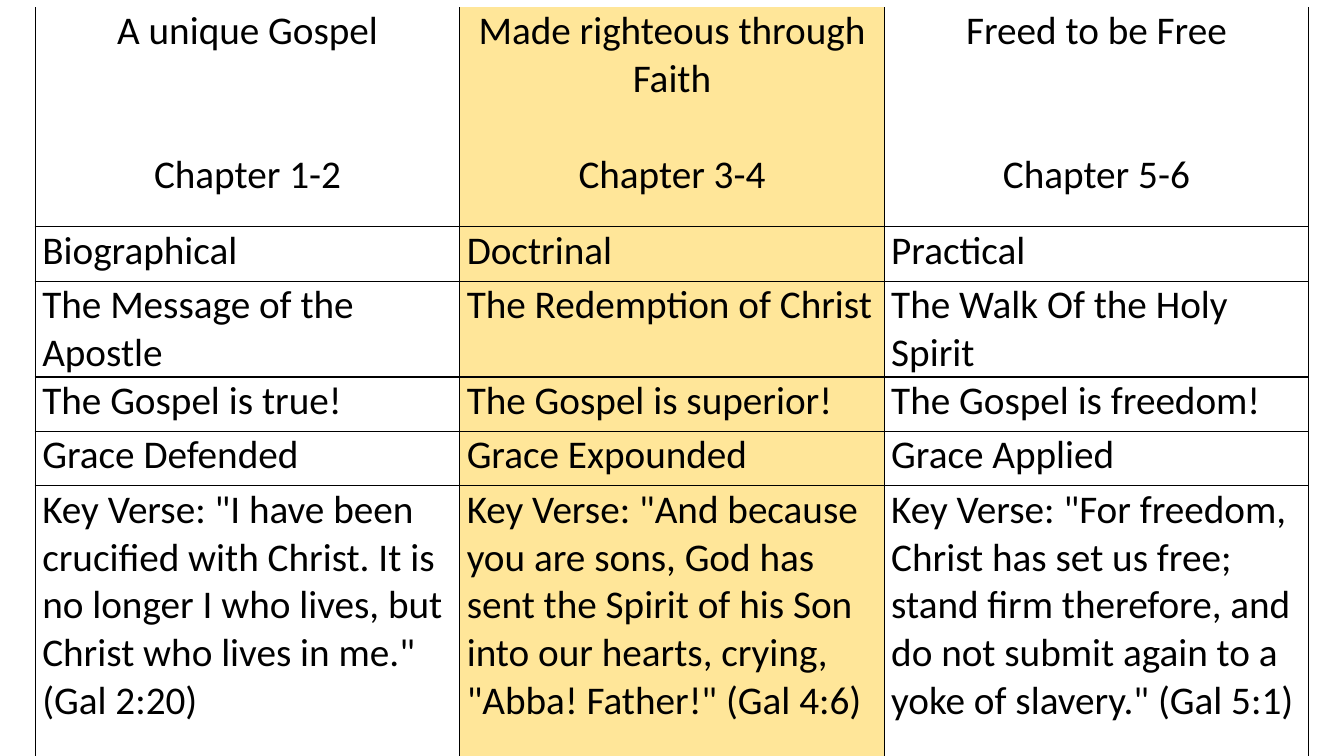
from lxml.etree import SubElement
from pptx import Presentation
from pptx.dml.color import RGBColor
from pptx.enum.text import PP_ALIGN
from pptx.oxml.ns import qn
from pptx.util import Inches, Pt

INK = "000000"
HIGHLIGHT = "FFE699"
LINE_PITCH = 34.2
ROW_HEIGHTS = [2.18, 0.54, 0.95, 0.54, 0.54, 2.7]
SECTIONS = [
    ("A unique Gospel", "Chapter 1-2", 2, [
        "Biographical",
        "The Message of the Apostle",
        "The Gospel is true!",
        "Grace Defended",
        'Key Verse: "I have been crucified with Christ. It is no longer I who lives, '
        'but Christ who lives in me." (Gal 2:20)',
    ]),
    ("Made righteous through Faith", "Chapter 3-4", 1, [
        "Doctrinal",
        "The Redemption of Christ",
        "The Gospel is superior!",
        "Grace Expounded",
        'Key Verse: "And because you are sons, God has sent the Spirit of his Son '
        'into our hearts, crying, "Abba! Father!" (Gal 4:6)',
    ]),
    ("Freed to be Free", "Chapter 5-6", 2, [
        "Practical",
        "The Walk Of the Holy Spirit",
        "The Gospel is freedom!",
        "Grace Applied",
        'Key Verse: "For freedom, Christ has set us free; stand firm therefore, '
        'and do not submit again to a yoke of slavery." (Gal 5:1)',
    ]),
]
HIGHLIGHTED_SECTION = 1


def color(value):
    return RGBColor.from_string(value)


def draw_borders(cell, open_top):
    properties = cell._tc.get_or_add_tcPr()
    for side in ("lnL", "lnR", "lnT", "lnB"):
        border = SubElement(properties, qn(f"a:{side}"), w=str(Pt(1)))
        if side == "lnT" and open_top:
            SubElement(border, qn("a:noFill"))
        else:
            paint = SubElement(border, qn("a:solidFill"))
            SubElement(paint, qn("a:srgbClr"), val=INK)


def style_paragraph(paragraph, alignment):
    paragraph.alignment = alignment
    paragraph.font.name = "Calibri"
    paragraph.font.size = Pt(28)
    paragraph.font.color.rgb = color(INK)


def style_cell(cell, is_heading, highlighted):
    cell.margin_left = cell.margin_right = Inches(0.07)
    cell.margin_top = cell.margin_bottom = 0
    draw_borders(cell, open_top=is_heading)
    if highlighted:
        cell.fill.solid()
        cell.fill.fore_color.rgb = color(HIGHLIGHT)
    else:
        cell.fill.background()
    for paragraph in cell.text_frame.paragraphs:
        style_paragraph(paragraph, PP_ALIGN.CENTER if is_heading else PP_ALIGN.LEFT)


def fill_section(outline, column, section):
    theme, chapters, gap_lines, points = section
    for row, text in enumerate([f"{theme}\n{chapters}", *points]):
        cell = outline.cell(row, column)
        cell.text = text
        style_cell(cell, row == 0, column == HIGHLIGHTED_SECTION)
    heading = outline.cell(0, column).text_frame
    heading.paragraphs[1].space_before = Pt(gap_lines * LINE_PITCH)


def add_outline(slide, left, top, width):
    outline = slide.shapes.add_table(
        len(ROW_HEIGHTS), len(SECTIONS), Inches(left), Inches(top),
        Inches(width), Inches(sum(ROW_HEIGHTS))).table
    outline.first_row = False
    outline.horz_banding = False
    for row, height in zip(outline.rows, ROW_HEIGHTS):
        row.height = Inches(height)
    for column, section in enumerate(SECTIONS):
        fill_section(outline, column, section)


def main():
    presentation = Presentation()
    presentation.slide_width = Inches(13.33)
    presentation.slide_height = Inches(7.5)
    slide = presentation.slides.add_slide(presentation.slide_layouts[6])
    add_outline(slide, 0.35, 0.07, 12.63)
    presentation.save("out.pptx")


if __name__ == "__main__":
    main()
